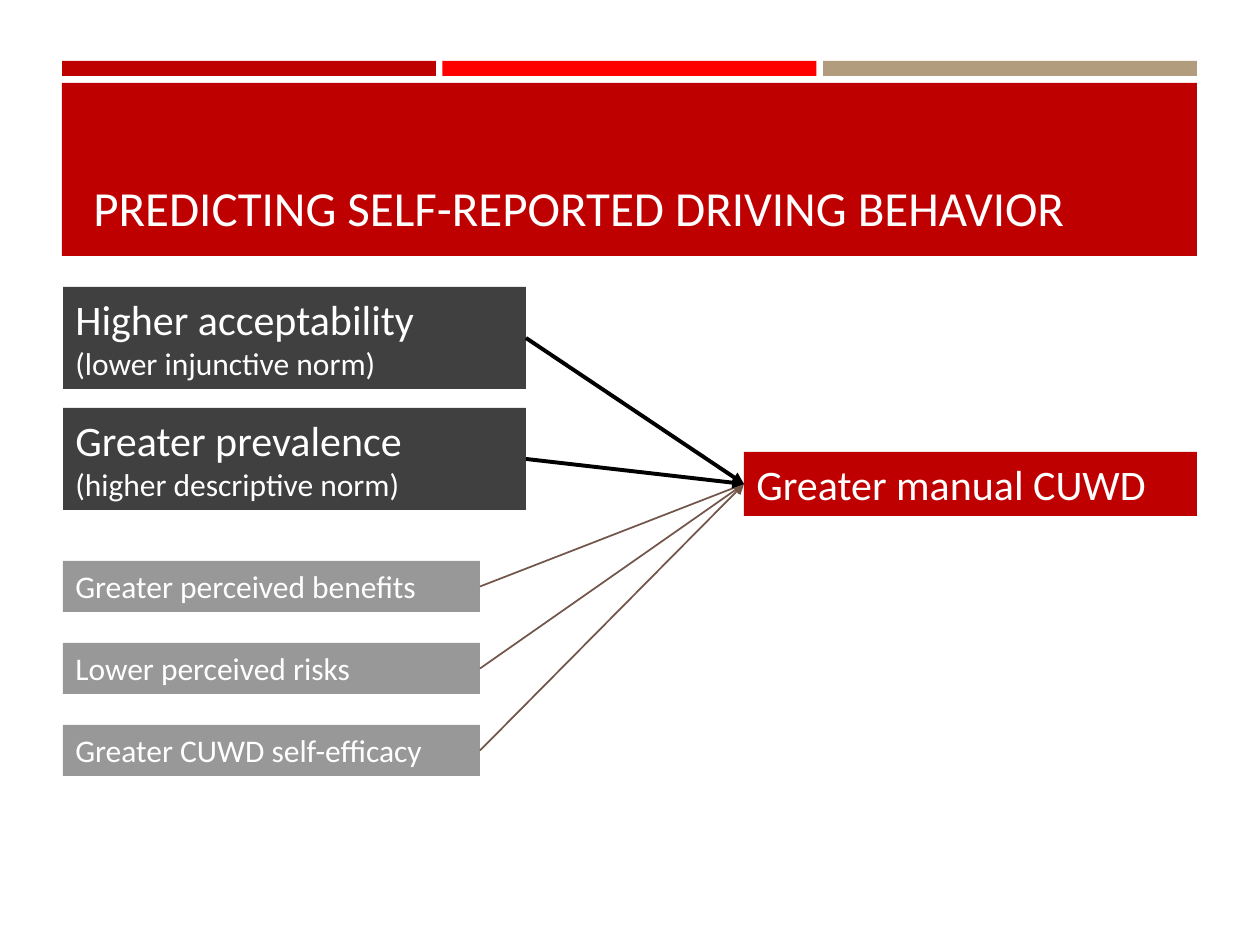
from lxml import etree
from pptx import Presentation, util as u
from pptx.dml.color import RGBColor
from pptx.enum import shapes, text
from pptx.oxml.ns import qn

PX = 914400 / 126
FONT = "Calibri"
WHITE = RGBColor(0xFF, 0xFF, 0xFF)
BLACK = RGBColor(0, 0, 0)
CRIMSON = RGBColor(0xBF, 0, 0)
RED = RGBColor(0xFF, 0, 0)
TAN = RGBColor(0xB1, 0x9C, 0x7D)
CHARCOAL = RGBColor(0x40, 0x40, 0x40)
GRAY = RGBColor(0x98, 0x98, 0x98)
BROWN = RGBColor(0x72, 0x56, 0x4A)

# Content: each line of text is (wording, size in points)
TITLE = [("PREDICTING SELF-REPORTED DRIVING BEHAVIOR", 28)]
OUTCOME = [("Greater manual CUWD", 24)]
GROUPS = [
    {"top": 287, "step": 121, "width": 463, "height": 102,
     "fill": CHARCOAL, "line": BLACK, "weight": 2.25,
     "boxes": [[("Higher acceptability", 24), ("(lower injunctive norm)", 18)],
               [("Greater prevalence", 24), ("(higher descriptive norm)", 18)]]},
    {"top": 561, "step": 82, "width": 417, "height": 51,
     "fill": GRAY, "line": BROWN, "weight": 1,
     "boxes": [[("Greater perceived benefits", 18)],
               [("Lower perceived risks", 18)],
               [("Greater CUWD self-efficacy", 18)]]},
]
LEFT, RIGHT = 62, 1197
BARS = [CRIMSON, RED, TAN]
BAR_WIDTH = 374


def emu(*lengths):
    return [u.Emu(round(length * PX)) for length in lengths]


def write(shape, lines, anchor=text.MSO_ANCHOR.TOP):
    frame = shape.text_frame
    frame.word_wrap = True
    frame.vertical_anchor = anchor
    frame.text = "\n".join(wording for wording, _ in lines)
    for paragraph, (_, size) in zip(frame.paragraphs, lines):
        paragraph.alignment = text.PP_ALIGN.LEFT
        font = paragraph.runs[0].font
        font.name, font.size = FONT, u.Pt(size)
        font.color.rgb = WHITE


def add_box(slide, left, top, width, height, fill, lines=()):
    shape = slide.shapes.add_shape(
        shapes.MSO_SHAPE.RECTANGLE, *emu(left, top, width, height))
    shape.shadow.inherit = False
    shape.fill.solid()
    shape.fill.fore_color.rgb = fill
    shape.line.fill.background()
    if lines:
        write(shape, lines)
    return shape


def add_arrow(slide, source, target, color, weight):
    arrow = slide.shapes.add_connector(shapes.MSO_CONNECTOR.STRAIGHT, 0, 0, 0, 0)
    arrow.begin_connect(source, 3)
    arrow.end_connect(target, 1)
    arrow.line.color.rgb = color
    arrow.line.width = u.Pt(weight)
    etree.SubElement(arrow.line._get_or_add_ln(), qn("a:tailEnd"), type="triangle")
    etree.SubElement(arrow._element.spPr, qn("a:effectLst"))


def main():
    presentation = Presentation()
    presentation.slide_width, presentation.slide_height = u.Inches(10), u.Inches(7.5)
    slide = presentation.slides.add_slide(presentation.slide_layouts[6])

    # Header: three bars spread evenly over the title band
    step = (RIGHT - LEFT - BAR_WIDTH) / (len(BARS) - 1)
    for index, color in enumerate(BARS):
        add_box(slide, LEFT + index * step, 61, BAR_WIDTH, 15, color)
    add_box(slide, LEFT, 83, RIGHT - LEFT, 173, CRIMSON)
    title = slide.shapes.add_textbox(*emu(81, 94, 1101, 149))
    write(title, TITLE, text.MSO_ANCHOR.BOTTOM)

    # Outcome
    outcome = add_box(slide, 744, 452, RIGHT - 744, 64, CRIMSON, OUTCOME)

    # Predictors, then their arrows: thin ones first, strong ones on top
    arrows = []
    for group in GROUPS:
        for index, lines in enumerate(group["boxes"]):
            box = add_box(slide, 63, group["top"] + index * group["step"],
                          group["width"], group["height"], group["fill"], lines)
            arrows.append((box, group["line"], group["weight"]))
    for box, color, weight in reversed(arrows):
        add_arrow(slide, box, outcome, color, weight)

    presentation.save("out.pptx")


if __name__ == "__main__":
    main()
